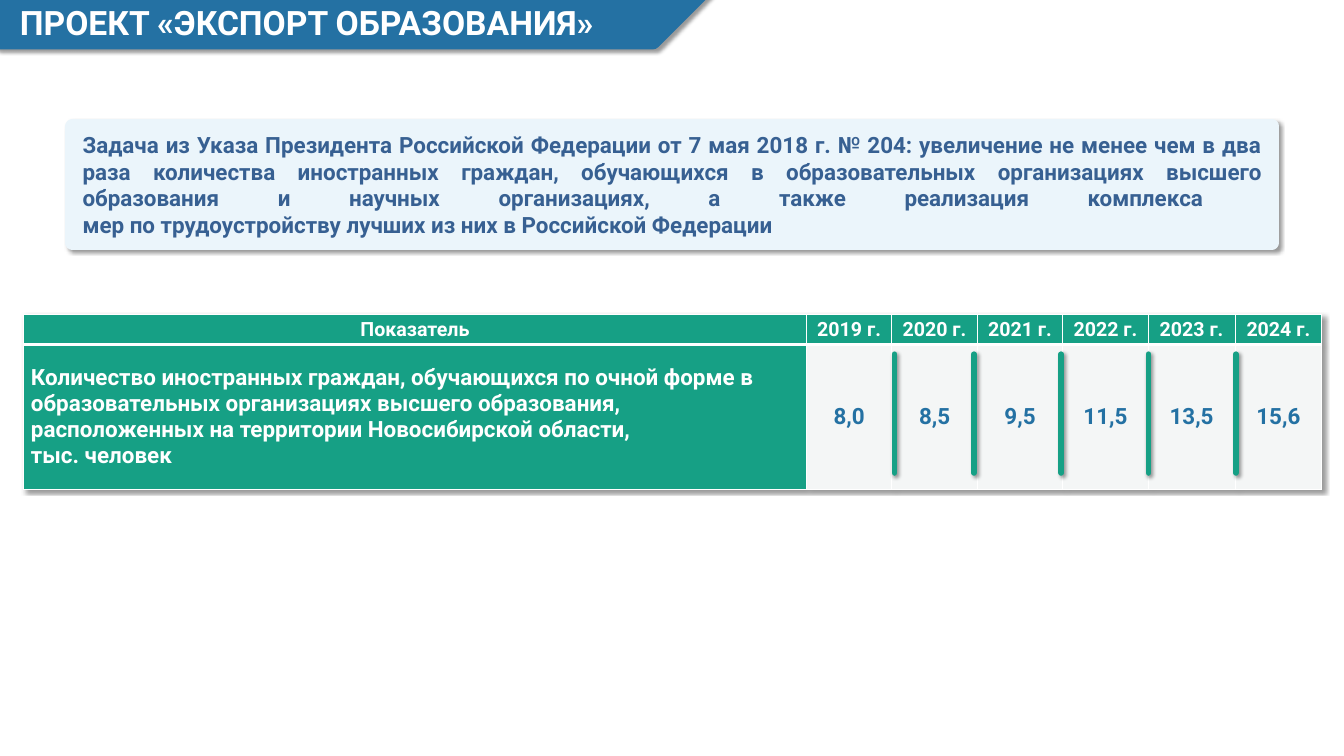
from pptx import Presentation
from pptx.dml.color import RGBColor
from pptx.enum.shapes import MSO_CONNECTOR as Link, MSO_SHAPE as Shape
from pptx.enum.text import MSO_ANCHOR as Anchor, MSO_AUTO_SIZE as Fit, PP_ALIGN as Align
from pptx.oxml import parse_xml
from pptx.oxml.ns import nsdecls, qn
from pptx.util import Cm, Pt

WHITE = RGBColor(0xFF, 0xFF, 0xFF)
BLUE = RGBColor(0x24, 0x71, 0xA3)
NAVY = RGBColor(0x37, 0x60, 0x92)
PALE = RGBColor(0xEB, 0xF5, 0xFB)
GREEN = RGBColor(0x16, 0xA0, 0x85)
GREY = RGBColor(0xF4, 0xF6, 0xF6)
FONT = "Roboto"

TITLE = "ПРОЕКТ «ЭКСПОРТ ОБРАЗОВАНИЯ»"
TASK = [
    "Задача из Указа Президента Российской Федерации от 7 мая 2018 г. № 204: "
    "увеличение не менее чем в два раза количества иностранных граждан, "
    "обучающихся в образовательных организациях высшего образования и научных "
    "организациях, а также реализация комплекса ",
    "мер по трудоустройству лучших из них в Российской Федерации",
]
METRIC = [
    "Количество иностранных граждан, обучающихся по очной форме в "
    "образовательных организациях высшего образования, расположенных на "
    "территории Новосибирской области, ",
    "тыс. человек",
]
YEARS = range(2019, 2025)
VALUES = ["8,0", "8,5", "9,5", "11,5", "13,5", "15,6"]
WIDTHS = [29.59] + [3.23] * 4 + [3.28] * 2


def write(frame, lines, size, color, align=Align.LEFT, space=None):
    """Write bold lines, split by line breaks, into the first paragraph."""
    para = frame.paragraphs[0]
    para.alignment = align
    para.line_spacing = space
    for num, line in enumerate(lines):
        if num:
            para.add_line_break()
        run = para.add_run()
        run.text = line
        font = run.font
        font.name, font.size, font.bold = FONT, Pt(size), True
        font.color.rgb = color


def pad(frame, side, edge):
    """Set the side and edge margins of a frame or cell."""
    frame.margin_left = frame.margin_right = Cm(side)
    frame.margin_top = frame.margin_bottom = Cm(edge)


def shadow():
    """Return a soft shadow that falls to the lower right."""
    return parse_xml(
        f'<a:effectLst {nsdecls("a")}><a:outerShdw blurRad="{Pt(4)}" dist="{Pt(3)}" '
        'dir="2700000" algn="tl" rotWithShape="0"><a:srgbClr val="000000">'
        '<a:alpha val="40000"/></a:srgbClr></a:outerShdw></a:effectLst>'
    )


def panel(slide, kind, box, color):
    """Add a shape with a thick rounded outline and a shadow."""
    shape = slide.shapes.add_shape(kind, *map(Cm, box))
    shape.fill.solid()
    shape.fill.fore_color.rgb = color
    shape.line.color.rgb = color
    shape.line.width = Pt(15)
    props = shape.element.spPr
    props.find(qn("a:ln")).append(parse_xml(f'<a:round {nsdecls("a")}/>'))
    props.append(shadow())
    return shape


def banner(slide):
    """Add the snipped banner and put the title over it."""
    shape = panel(slide, Shape.SNIP_1_RECTANGLE, (0, -2.21, 26.59, 3.81), BLUE)
    shape.adjustments[0] = 0.5
    shape.rotation = 180
    shape.element.spPr.find(qn("a:xfrm")).set("flipH", "1")
    title = slide.shapes.title
    title.left, title.top, title.width, title.height = map(Cm, (0.5, 0.1, 38.7, 1.58))
    frame = title.text_frame
    frame.word_wrap, frame.auto_size = True, Fit.NONE
    frame.vertical_anchor = Anchor.TOP
    pad(frame, 0.25, 0.13)
    write(frame, [TITLE], 36, WHITE, space=0.9)
    shape.element.addnext(title.element)


def task(slide):
    """Add the box with the task."""
    frame = panel(slide, Shape.RECTANGLE, (2.74, 4.78, 45.34, 4.39), PALE).text_frame
    frame.word_wrap = True
    frame.vertical_anchor = Anchor.MIDDLE
    pad(frame, 0.38, 0.18)
    write(frame, TASK, 24, NAVY, Align.JUSTIFY)


def border(cell, top, low):
    """Draw the white borders of a cell."""
    props = cell._tc.get_or_add_tcPr()
    for num, (side, size) in enumerate(zip("LRTB", (1, 1, top, low))):
        props.insert(num, parse_xml(
            f'<a:ln{side} {nsdecls("a")} w="{Pt(size)}"><a:solidFill>'
            f'<a:srgbClr val="{WHITE}"/></a:solidFill></a:ln{side}>'
        ))


def paint(cell, color):
    """Fill a cell."""
    cell.fill.solid()
    cell.fill.fore_color.rgb = color


def grid(slide):
    """Add the table of yearly targets."""
    box = map(Cm, (0.89, 11.89, sum(WIDTHS), 6.6))
    table = slide.shapes.add_table(2, len(WIDTHS), *box).table
    table._tbl.tblPr.insert(0, shadow())
    for col, width in zip(table.columns, WIDTHS):
        col.width = Cm(width)
    for row, height in zip(table.rows, (1.14, 5.46)):
        row.height = Cm(height)
    heads = ["Показатель"] + [f"{year} г." for year in YEARS]
    cells = [METRIC] + [[value] for value in VALUES]
    for num, (head, lines) in enumerate(zip(heads, cells)):
        top, low = table.cell(0, num), table.cell(1, num)
        paint(top, GREEN)
        pad(top, 0.18, 0)
        border(top, 1, 3)
        write(top.text_frame, [head], 21, WHITE, Align.CENTER, 1.15)
        paint(low, GREY if num else GREEN)
        pad(low, 0.28, 0)
        border(low, 3, 1)
        low.vertical_anchor = Anchor.MIDDLE
        color, align = (BLUE, Align.CENTER) if num else (WHITE, Align.LEFT)
        write(low.text_frame, lines, 24, color, align)


def rule(slide, left):
    """Add a green divider with round ends."""
    ends = map(Cm, (left, 13.39, left, 17.88))
    line = slide.shapes.add_connector(Link.STRAIGHT, *ends)
    line.line.color.rgb = GREEN
    line.line.width = Pt(6)
    props = line.element.spPr
    props.find(qn("a:ln")).set("cap", "rnd")
    props.append(shadow())


def main():
    """Build the slide and save it."""
    deck = Presentation()
    deck.slide_width, deck.slide_height = Cm(50.8), Cm(28.58)
    slide = deck.slides.add_slide(deck.slide_layouts[5])
    banner(slide)
    task(slide)
    grid(slide)
    for left in [33.81] + [36.81 + 3.3 * num for num in range(4)]:
        rule(slide, left)
    deck.save("out.pptx")


if __name__ == "__main__":
    main()
